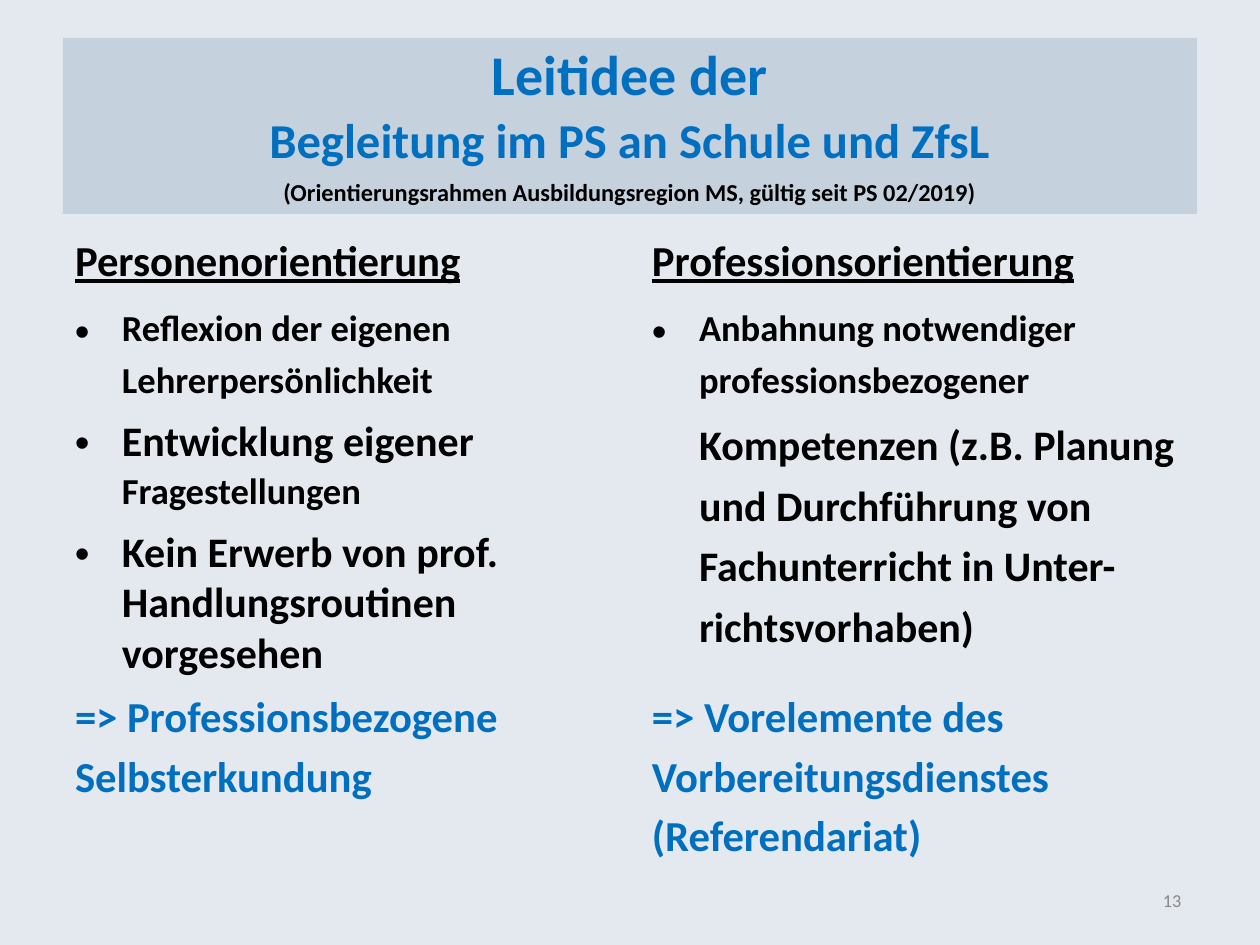
from pptx import Presentation
from pptx.dml.color import RGBColor
from pptx.enum.shapes import MSO_SHAPE
from pptx.enum.text import PP_ALIGN
from pptx.util import Pt

SCALE = 914400 / 126
WIDE, HIGH = 1260, 945
COLS = (75, 652)
INDENT = 47

HUES = {
    "page": "E3E9EE",
    "band": "C6D1DE",
    "ink": "000000",
    "blue": "006FC0",
    "gray": "888888",
}

# size, baseline in percent, line spacing, space before
STYLES = {
    "title": (32, 0, 1.02, 2),
    "second": (48, 2, Pt(38.4), 1.9),
    "note": (24, 0, Pt(19.1), 0),
    "head": (42, 3, Pt(29.5), 1.5),
    "next": (42, 2, Pt(33.6), 0.2),
    "first": (36, 3, Pt(25.4), 1.3),
    "small": (36, 1, Pt(28.8), 0.2),
    "large": (24, 0, 1.02, 3.8),
    "sub": (36, 1, Pt(28.8), 1.4),
    "last": (24, 0, 1.0, 4.2),
    "wide": (24, 0, Pt(34.6), 0.7),
    "dot": (24, 0, Pt(25.6), 1.3),
    "number": (18, 2, Pt(13.2), 0.7),
}
STYLES["note"] = (24, 2, Pt(19.1), 0)

LEFT = [
    ("Reflexion der eigenen", "first"),
    ("Lehrerpersönlichkeit", "small"),
    ("Entwicklung eigener", "large"),
    ("Fragestellungen", "sub"),
    ("Kein Erwerb von prof. Handlungsroutinen vorgesehen", "last"),
]
RIGHT = [
    ("Anbahnung notwendiger", "first"),
    ("professionsbezogener", "small"),
    ("Kompetenzen (z.B. Planung und Durchführung von "
     "Fachunterricht in Unter- richtsvorhaben)", "wide"),
]
AIMS = (
    [("=> Professionsbezogene", "head"), ("Selbsterkundung", "next")],
    [("=> Vorelemente des", "head"), ("Vorbereitungsdienstes", "next"),
     ("(Referendariat)", "next")],
)
TITLE = [
    ("Leitidee der", "title", "blue"),
    ("Begleitung im PS an Schule und ZfsL", "second", "blue"),
    ("(Orientierungsrahmen Ausbildungsregion MS, gültig seit PS 02/2019)",
     "note", "ink"),
]


def px(*nums):
    return [round(num * SCALE) for num in nums]


def add_band(slide, box, hue):
    band = slide.shapes.add_shape(MSO_SHAPE.RECTANGLE, *px(*box))
    band.shadow.inherit = False
    band.fill.solid()
    band.fill.fore_color.rgb = RGBColor.from_string(HUES[hue])
    band.line.fill.background()


def add_text(slide, box, lines, hue="ink", bold=True, under=False,
             face="Calibri", align=PP_ALIGN.LEFT):
    frame = slide.shapes.add_textbox(*px(*box)).text_frame
    frame.word_wrap = True
    frame.margin_left = frame.margin_right = 0
    frame.margin_top = frame.margin_bottom = 0
    for i, (text, style, *own) in enumerate(lines):
        para = frame.add_paragraph() if i else frame.paragraphs[0]
        para.text = text
        para.alignment = align
        size, base, space, before = STYLES[style]
        para.line_spacing = space
        para.space_before = Pt(before)
        font = para.font
        font.name, font.size, font.bold = face, Pt(size), bold
        font.underline = under
        font.color.rgb = RGBColor.from_string(HUES[own[0] if own else hue])
        if base:
            font._element.set("baseline", str(base * 1000))


def add_dot(slide, left, top):
    add_text(slide, (left, top, 24, 45), [("•", "dot")],
             bold=False, face="Arial")


def main():
    deck = Presentation()
    deck.slide_width, deck.slide_height = px(WIDE, HIGH)
    slide = deck.slides.add_slide(deck.slide_layouts[6])
    title = (63, 38, 1134, 176)
    add_band(slide, (0, 0, WIDE, HIGH), "page")
    add_band(slide, title, "band")
    add_text(slide, title, TITLE, align=PP_ALIGN.CENTER)

    heads = ("Personenorientierung", "Professionsorientierung")
    spans = (388, 484)
    dots = (3, 1)
    for left, head, items, aim, span, count in zip(
            COLS, heads, (LEFT, RIGHT), AIMS, spans, dots):
        add_text(slide, (left, 242, 495, 53), [(head, "head")], under=True)
        for row in range(count):
            add_dot(slide, left, 310 + 111 * row)
        add_text(slide, (left + INDENT, 312, span, 368), items)
        add_text(slide, (left, 698, 495, 170), aim, hue="blue")

    add_text(slide, (1163, 891, 28, 24), [("13", "number")],
             hue="gray", bold=False)
    deck.save("out.pptx")


if __name__ == "__main__":
    main()
